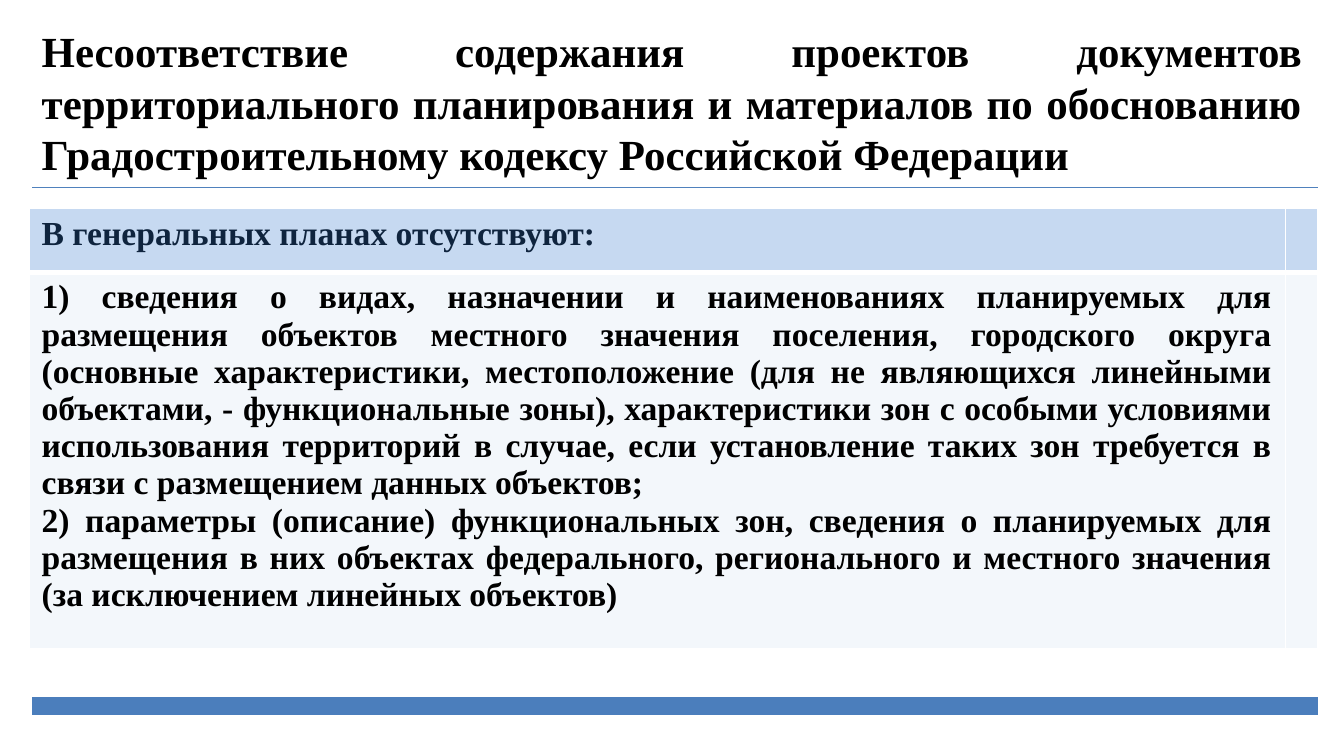
"""Build the slide on missing content in general plans."""
from dataclasses import dataclass

from lxml.etree import SubElement
from pptx import Presentation
from pptx.dml.color import RGBColor
from pptx.enum.shapes import MSO_CONNECTOR as Connector
from pptx.enum.text import MSO_ANCHOR as Anchor, MSO_AUTO_SIZE as AutoSize, PP_ALIGN as Align
from pptx.oxml.ns import qn
from pptx.util import Inches, Pt

BLACK = RGBColor(0x00, 0x00, 0x00)
NAVY = RGBColor(0x0F, 0x24, 0x3E)
RULE_BLUE = RGBColor(0x4F, 0x81, 0xBD)
BAR_BLUE = RGBColor(0x4B, 0x7E, 0xBC)
HEADER_FILL = RGBColor(0xC6, 0xD9, 0xF1)
BODY_FILL = RGBColor(0xF3, 0xF7, 0xFB)
WHITE = RGBColor(0xFF, 0xFF, 0xFF)

SLIDE_WIDTH = Inches(10)
SLIDE_HEIGHT = SLIDE_WIDTH * 9 // 16
TITLE_ONLY = 5
HEADING = (
    "Несоответствие содержания проектов документов территориального планирования "
    "и материалов по обоснованию Градостроительному кодексу Российской Федерации"
)
COLUMN_SHARES = (93.45, 2.4)


@dataclass(frozen=True)
class Rule:
    """A horizontal line placed by its share of the slide height."""
    level: float
    color: RGBColor
    weight: float


@dataclass(frozen=True)
class Band:
    """A table row with its text, colours and border weights in points."""
    paragraphs: tuple[str, ...]
    share: float
    fill: RGBColor
    ink: RGBColor
    top: float
    bottom: float


RULES = (Rule(93.38, BAR_BLUE, 10), Rule(24.8, RULE_BLUE, 0.25))
BANDS = (
    Band(("В генеральных планах отсутствуют:",), 8.4, HEADER_FILL, NAVY, 1, 3),
    Band((
        "1) сведения о видах, назначении и наименованиях планируемых для размещения "
        "объектов местного значения поселения, городского округа (основные "
        "характеристики, местоположение (для не являющихся линейными объектами, - "
        "функциональные зоны), характеристики зон с особыми условиями использования "
        "территорий в случае, если установление таких зон требуется в связи с "
        "размещением данных объектов;",
        "2) параметры (описание) функциональных зон, сведения о планируемых для "
        "размещения в них объектах федерального, регионального и местного значения "
        "(за исключением линейных объектов)",
    ), 49.8, BODY_FILL, BLACK, 3, 1),
)


def across(share: float) -> int:
    """Return a percentage of the slide width."""
    return round(SLIDE_WIDTH * share / 100)


def down(share: float) -> int:
    """Return a percentage of the slide height."""
    return round(SLIDE_HEIGHT * share / 100)


def assign(target, values: dict) -> None:
    """Set every attribute in values on the target."""
    for name, value in values.items():
        setattr(target, name, value)


def write(frame, paragraphs: tuple[str, ...], size: float, ink: RGBColor) -> None:
    """Fill a text frame with bold justified paragraphs."""
    frame.text = "\n".join(paragraphs)
    for paragraph in frame.paragraphs:
        paragraph.alignment = Align.JUSTIFY
        for run in paragraph.runs:
            assign(run.font, {"name": "Times New Roman", "size": Pt(size), "bold": True})
            run.font.color.rgb = ink


def draw_heading(slide) -> None:
    """Place and format the title placeholder."""
    heading = slide.shapes.title
    assign(heading, {"left": across(2.2), "top": down(2.4),
                     "width": across(95.9), "height": down(22.4)})
    assign(heading.text_frame, {
        "word_wrap": True, "auto_size": AutoSize.NONE, "vertical_anchor": Anchor.TOP,
        "margin_left": Inches(0.09), "margin_right": Inches(0.11),
        "margin_top": Inches(0.05), "margin_bottom": Inches(0.05),
    })
    write(heading.text_frame, (HEADING,), 23, BLACK)


def draw_rule(slide, rule: Rule) -> None:
    """Draw a horizontal rule without a shadow."""
    level = down(rule.level)
    line = slide.shapes.add_connector(
        Connector.STRAIGHT, across(2.4), level, across(98.05), level)
    line.line.color.rgb = rule.color
    line.line.width = Pt(rule.weight)
    SubElement(line._element.spPr, qn("a:effectLst"))


def draw_borders(cell, weights: dict[str, float]) -> None:
    """Give a cell white borders of the given weights."""
    properties = cell._tc.get_or_add_tcPr()
    for side, weight in weights.items():
        border = SubElement(properties, qn(f"a:ln{side}"), w=str(Pt(weight)))
        fill = SubElement(border, qn("a:solidFill"))
        SubElement(fill, qn("a:srgbClr"), val=str(WHITE))


def draw_table(slide) -> None:
    """Draw the table of missing content."""
    table = slide.shapes.add_table(
        len(BANDS), len(COLUMN_SHARES), across(2.2), down(27.6),
        across(sum(COLUMN_SHARES)), down(sum(band.share for band in BANDS))).table
    for column, share in zip(table.columns, COLUMN_SHARES):
        column.width = across(share)
    for row, band in zip(table.rows, BANDS):
        row.height = down(band.share)
        for cell in row.cells:
            draw_borders(cell, {"L": 1, "R": 1, "T": band.top, "B": band.bottom})
            cell.fill.solid()
            cell.fill.fore_color.rgb = band.fill
            cell.margin_left = Inches(0.09)
        write(row.cells[0].text_frame, band.paragraphs, 18, band.ink)


def main() -> None:
    """Assemble and save the presentation."""
    deck = Presentation()
    assign(deck, {"slide_width": SLIDE_WIDTH, "slide_height": SLIDE_HEIGHT})
    slide = deck.slides.add_slide(deck.slide_layouts[TITLE_ONLY])
    draw_heading(slide)
    for rule in RULES:
        draw_rule(slide, rule)
    draw_table(slide)
    deck.save("out.pptx")


if __name__ == "__main__":
    main()
